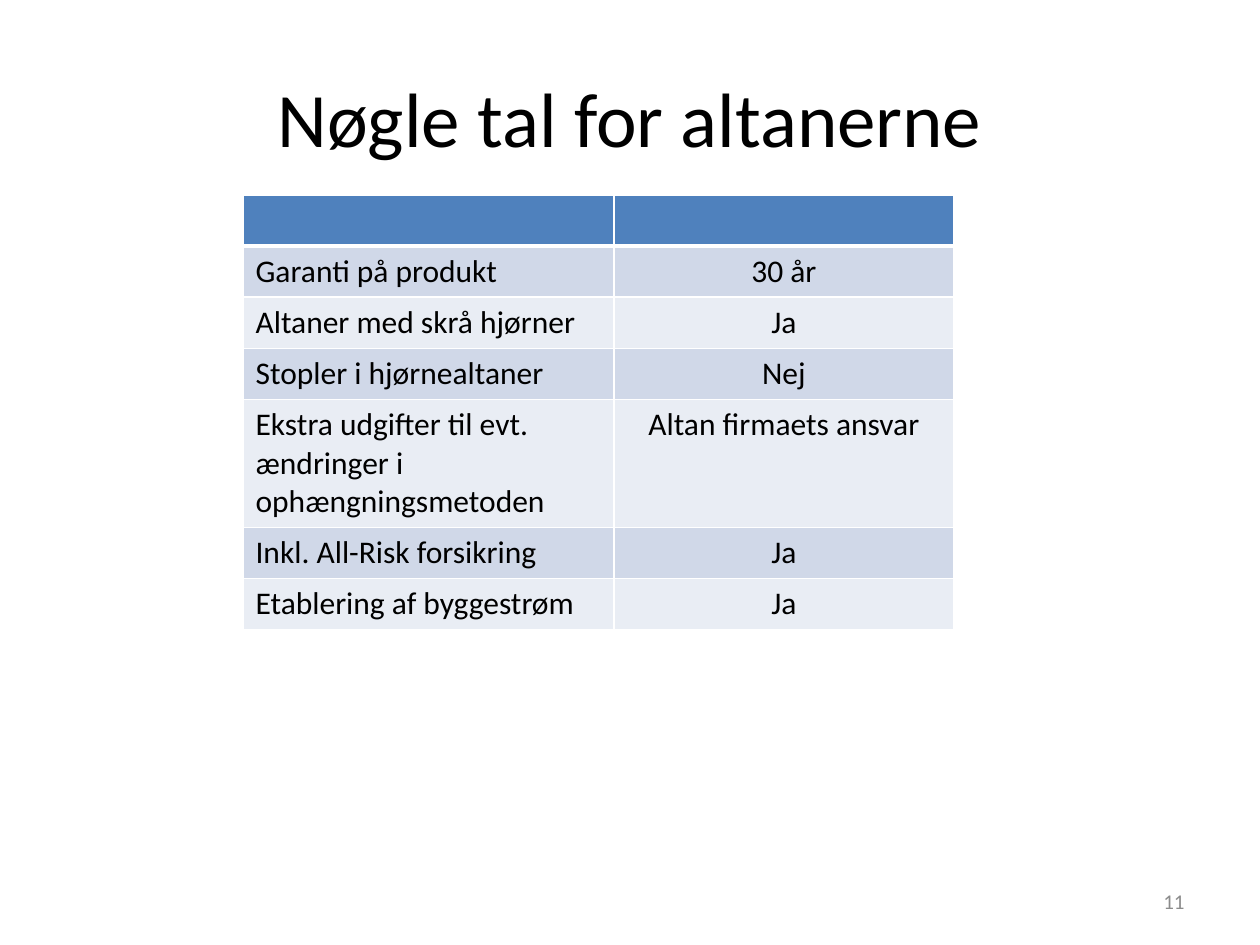
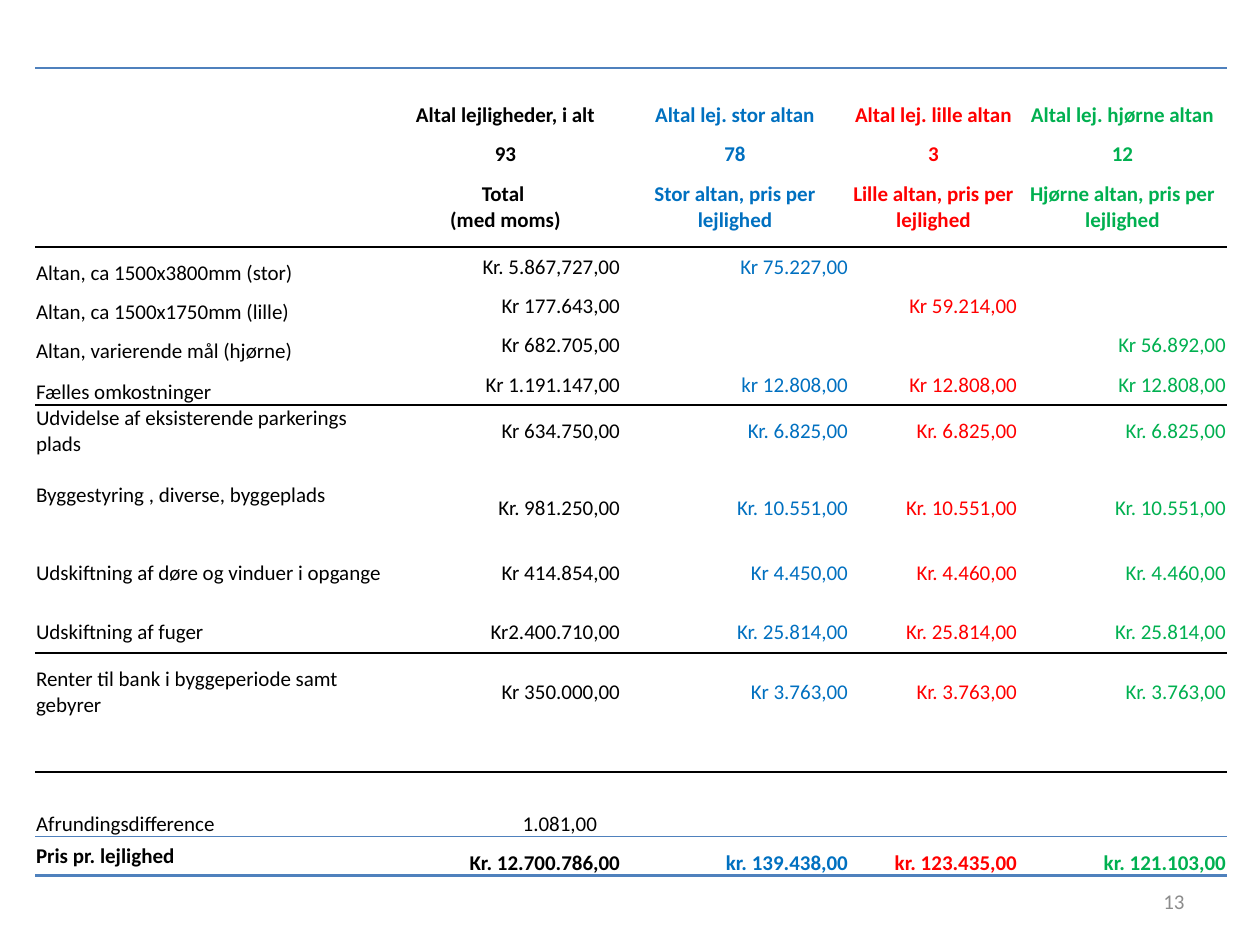
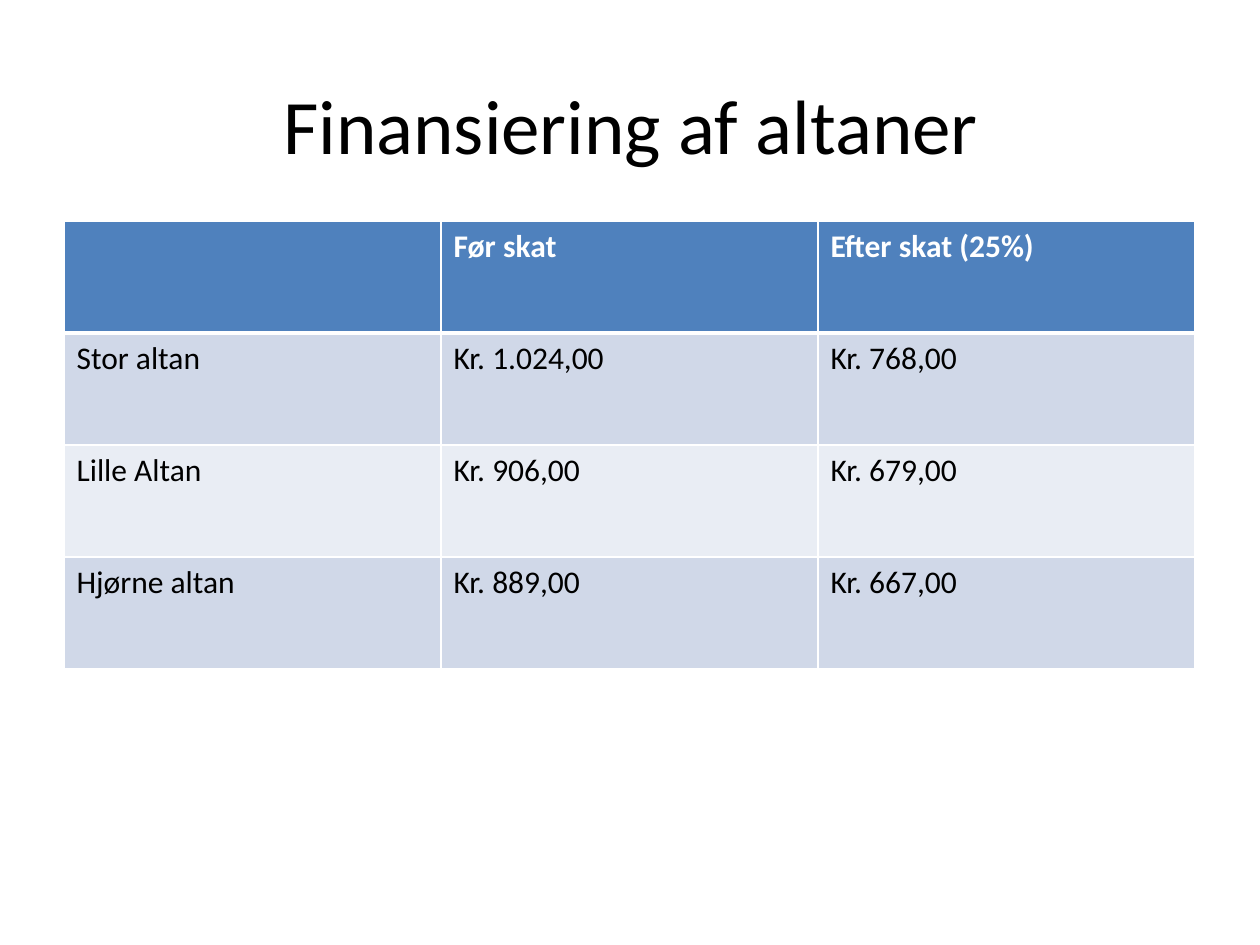
from dataclasses import dataclass

from lxml import etree
from pptx import Presentation
from pptx import util as u
from pptx.dml.color import RGBColor
from pptx.enum import text
from pptx.oxml.ns import qn

LEFT, CENTER, RIGHT = text.PP_ALIGN.LEFT, text.PP_ALIGN.CENTER, text.PP_ALIGN.RIGHT
TOP, MIDDLE, BOTTOM = text.MSO_ANCHOR.TOP, text.MSO_ANCHOR.MIDDLE, text.MSO_ANCHOR.BOTTOM
TITLE_ONLY, BLANK = 5, 6
NO_STYLE = "{2D5ABB26-0587-4C30-8999-92F81FD0307C}"


@dataclass(frozen=True)
class Theme:
    font: str = "Calibri"
    ink: str = "000000"
    white: str = "FFFFFF"
    muted: str = "8C8C8C"
    accent: str = "4F81BD"
    bands: tuple = ("D0D8E8", "E9EDF4")
    big: str = "0070C0"
    small: str = "FF0000"
    corner: str = "00B050"
    title_pt: int = 44
    body_pt: int = 18
    price_pt: int = 12
    line_pt: float = 14.65  # height of one line of price text


T = Theme()


def px(n):
    return u.Emu(round(n * 914400 / 126))


# ---- Elements ----
def write(tf, content, size=T.body_pt, color=T.ink, bold=False, align=LEFT, gap=0):
    """Fill a text frame, one paragraph per line, with gap points between them."""
    for i, line in enumerate(content.split("\n")):
        p = tf.paragraphs[0] if i == 0 else tf.add_paragraph()
        p.alignment = align
        if i and gap:
            p.space_before = u.Pt(gap)
        if not line:
            p._p.get_or_add_endParaRPr().set("sz", str(size * 100))
            continue
        r = p.add_run()
        r.text = line
        r.font.name, r.font.size, r.font.bold = T.font, u.Pt(size), bold
        r.font.color.rgb = RGBColor.from_string(color)


def add_title(s, content, x, y):
    sp = s.shapes.title
    sp.left, sp.top, sp.width, sp.height = px(x), px(y), px(1134), px(158)
    sp.text_frame.vertical_anchor = MIDDLE
    write(sp.text_frame, content, size=T.title_pt, align=CENTER)


def add_page_number(s, number):
    sp = s.shapes.add_textbox(px(903), px(876), px(294), px(50))
    tf = sp.text_frame
    tf.word_wrap = True
    tf.vertical_anchor = MIDDLE
    write(tf, number, size=T.price_pt, color=T.muted, align=RIGHT)


def add_table(s, x, y, cols, rows):
    sp = s.shapes.add_table(len(rows), len(cols), px(x), px(y), px(sum(cols)), px(sum(rows)))
    table = sp.table
    table.first_row = table.horz_banding = False
    table._tbl.tblPr.find(qn("a:tableStyleId")).text = NO_STYLE
    for col, width in zip(table.columns, cols):
        col.width = px(width)
    for row, height in zip(table.rows, rows):
        row.height = px(height)
    return table


def set_borders(cell, **sides):
    """Draw cell sides, each given as side=(colour, points)."""
    tc_pr = cell._tc.get_or_add_tcPr()
    drawn = [side for side in "LRTB" if side in sides]
    for i, side in enumerate(drawn):
        color, width = sides[side]
        ln = etree.Element(qn("a:ln" + side), w=str(u.Pt(width)))
        fill = etree.SubElement(ln, qn("a:solidFill"))
        etree.SubElement(fill, qn("a:srgbClr"), val=color)
        tc_pr.insert(i, ln)


def add_banded_table(s, x, y, cols, heights, rows, aligns):
    table = add_table(s, x, y, cols, heights)
    thin, thick = (T.white, 1), (T.white, 3)
    for i, row in enumerate(rows):
        header = i == 0
        for j, content in enumerate(row):
            cell = table.cell(i, j)
            cell.fill.solid()
            fill = T.accent if header else T.bands[(i - 1) % 2]
            cell.fill.fore_color.rgb = RGBColor.from_string(fill)
            set_borders(cell, L=thin, R=thin, T=thick if i == 1 else thin,
                        B=thick if header else thin)
            write(cell.text_frame, content, bold=header, align=aligns[j],
                  color=T.white if header else T.ink)


# ---- Price table ----
@dataclass
class PriceRow:
    height: int
    cells: tuple
    label_anchor: object = MIDDLE
    amount_anchor: object = MIDDLE
    header: bool = False
    bold: bool = False
    rule: tuple = ()


BLACK_RULE = (T.ink, 1)
PRICE_COLS = (355, 231, 228, 169, 209)
PRICE_COLORS = (T.ink, T.ink, T.big, T.small, T.corner)
ROUNDING = "Afrundingsdifference"
PRICE_ROWS = [
    PriceRow(60, ("", "Altal lejligheder, i alt", "Altal lej. stor altan",
                  "Altal lej. lille altan", "Altal lej. hjørne altan"),
             amount_anchor=BOTTOM, header=True, bold=True),
    PriceRow(39, ("", "93", "78", "3", "12"), amount_anchor=BOTTOM, header=True, bold=True),
    PriceRow(80, ("", "Total \n(med moms)", "Stor altan, pris per lejlighed",
                  "Lille altan, pris per lejlighed", "Hjørne altan, pris per lejlighed"),
             header=True, bold=True, rule=BLACK_RULE),
    PriceRow(39, ("Altan, ca 1500x3800mm (stor)", "Kr. 5.867,727,00", "Kr 75.227,00", "", ""),
             label_anchor=BOTTOM),
    PriceRow(39, ("Altan, ca 1500x1750mm (lille)", "Kr 177.643,00", "", "Kr 59.214,00", ""),
             label_anchor=BOTTOM),
    PriceRow(39, ("Altan, varierende mål (hjørne)", "Kr 682.705,00", "", "", "Kr 56.892,00"),
             label_anchor=BOTTOM),
    PriceRow(41, ("Fælles omkostninger", "Kr 1.191.147,00", "kr 12.808,00",
                  "Kr 12.808,00", "Kr 12.808,00"),
             label_anchor=BOTTOM, rule=BLACK_RULE),
    PriceRow(129, ("Udvidelse af eksisterende parkerings plads\nByggestyring , diverse, byggeplads",
                   "Kr 634.750,00\nKr. 981.250,00",
                   *["Kr. 6.825,00\nKr. 10.551,00"] * 3),
             label_anchor=TOP),
    PriceRow(78, ("Udskiftning af døre og vinduer i opgange", "Kr 414.854,00",
                  "Kr 4.450,00", "Kr. 4.460,00", "Kr. 4.460,00")),
    PriceRow(41, ("Udskiftning af fuger", "Kr2.400.710,00", *["Kr. 25.814,00"] * 3),
             rule=BLACK_RULE),
    PriceRow(78, ("Renter til bank i byggeperiode samt gebyrer", "Kr 350.000,00",
                  "Kr 3.763,00", "Kr. 3.763,00", "Kr. 3.763,00")),
    PriceRow(41, ("",) * 5, rule=BLACK_RULE),
    PriceRow(65, (ROUNDING, "1.081,00", "", "", ""),
             label_anchor=BOTTOM, amount_anchor=BOTTOM, rule=(T.accent, 0.5)),
    PriceRow(39, ("Pris pr. lejlighed", "Kr. 12.700.786,00", "kr. 139.438,00",
                  "kr. 123.435,00", "kr. 121.103,00"),
             amount_anchor=BOTTOM, bold=True, rule=(T.accent, 2)),
]


def add_price_table(s):
    table = add_table(s, 35, 68, PRICE_COLS, [row.height for row in PRICE_ROWS])
    for i, row in enumerate(PRICE_ROWS):
        for j, content in enumerate(row.cells):
            label = j == 0
            cell = table.cell(i, j)
            cell.margin_left = cell.margin_right = cell.margin_top = px(1)
            cell.margin_bottom = 0
            if row.cells[0] == ROUNDING and j == 1:
                cell.margin_right = px(24)
            cell.vertical_anchor = row.label_anchor if label else row.amount_anchor
            sides = {"B": row.rule} if row.rule else {}
            if i == 0:
                sides["T"] = (T.accent, 1.5)
            set_borders(cell, **sides)
            gap = 0 if row.header else T.line_pt * (1 if label else 2)
            write(cell.text_frame, content, size=T.price_pt, color=PRICE_COLORS[j],
                  bold=row.bold, gap=gap,
                  align=LEFT if label else CENTER if row.header else RIGHT)


# ---- Slides ----
def key_figures(prs):
    s = prs.slides.add_slide(prs.slide_layouts[TITLE_ONLY])
    rows = [
        ("", ""),
        ("Garanti på produkt", "30 år"),
        ("Altaner med skrå hjørner", "Ja"),
        ("Stopler i hjørnealtaner", "Nej"),
        ("Ekstra udgifter til evt. ændringer i ophængningsmetoden", "Altan firmaets ansvar"),
        ("Inkl. All-Risk forsikring", "Ja"),
        ("Etablering af byggestrøm", "Ja"),
    ]
    heights = [51] * 4 + [128] + [51] * 2
    add_banded_table(s, 243, 195, (371, 340), heights, rows, (LEFT, CENTER))
    add_title(s, "Nøgle tal for altanerne", 63, 38)
    add_page_number(s, "11")


def prices(prs):
    s = prs.slides.add_slide(prs.slide_layouts[BLANK])
    add_price_table(s)
    add_page_number(s, "13")


def financing(prs):
    s = prs.slides.add_slide(prs.slide_layouts[TITLE_ONLY])
    add_title(s, "Finansiering af altaner", 64, 45)
    rows = [
        ("", "Før skat", "Efter skat (25%)"),
        ("Stor altan", "Kr. 1.024,00", "Kr. 768,00"),
        ("Lille Altan", "Kr. 906,00", "Kr. 679,00"),
        ("Hjørne altan", "Kr. 889,00", "Kr. 667,00"),
    ]
    add_banded_table(s, 64, 221, [377] * 3, [112] * 4, rows, [LEFT] * 3)


def main():
    prs = Presentation()
    prs.slide_width, prs.slide_height = px(1260), px(945)
    key_figures(prs)
    prices(prs)
    financing(prs)
    prs.save("out.pptx")


if __name__ == "__main__":
    main()
